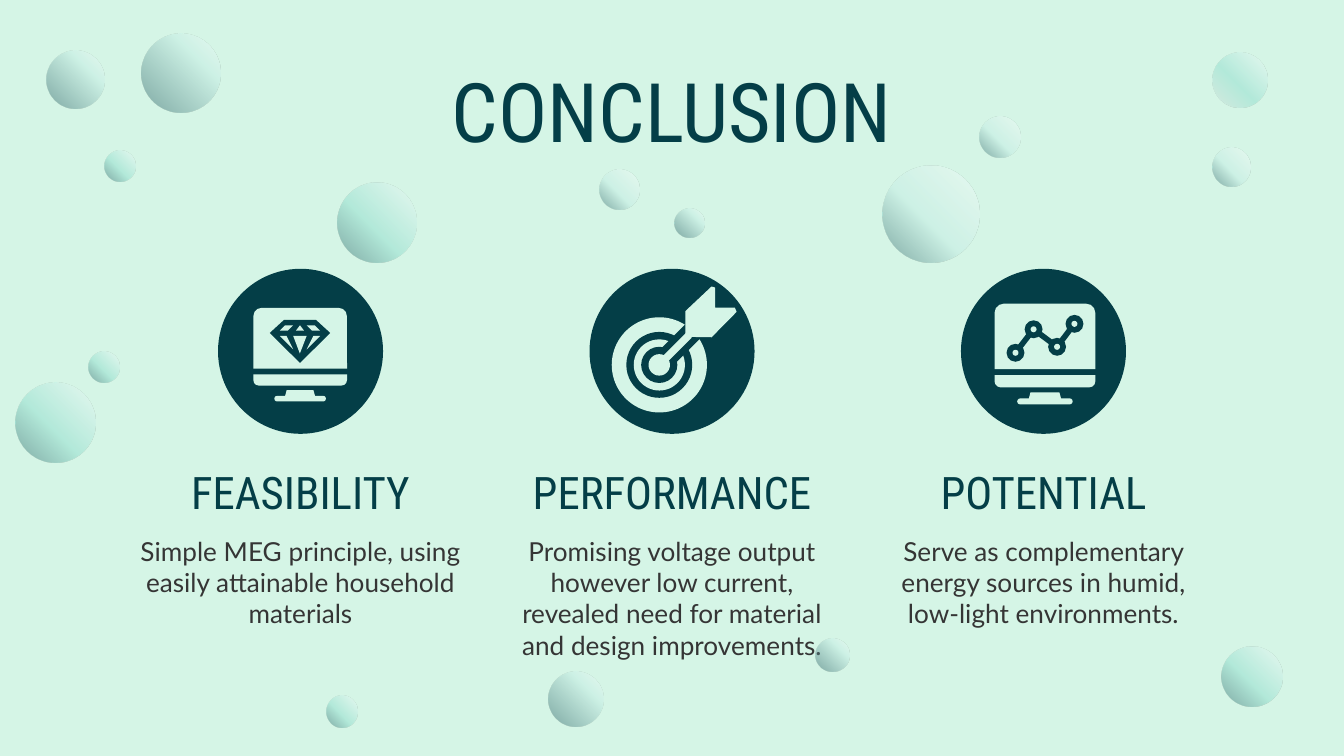
from dataclasses import dataclass
from lxml.etree import SubElement
from pptx import Presentation
from pptx.dml.color import RGBColor
from pptx.enum.shapes import MSO_CONNECTOR, MSO_SHAPE
from pptx.enum.text import MSO_ANCHOR, PP_ALIGN
from pptx.oxml import parse_xml
from pptx.oxml.ns import nsdecls, qn
from pptx.util import Pt


@dataclass(frozen=True)
class Theme:
    dark: str = "043E47"
    light: str = "D5F5E7"
    back: str = "D5F5E6"
    ink: str = "353535"
    white: str = "FFFFFF"
    mist: str = "C1ECE4"
    mint: str = "82D9C8"
    gray: str = "D9D9D9"
    head: str = "Roboto Condensed"
    body: str = "Lato"
    big: int = 44
    mid: int = 24
    small: int = 14


T = Theme()
TINTS = {
    "mist": (56, T.mist, T.dark),
    "mint": (56, T.mint, T.dark),
    "deep": (31, T.mist, T.dark),
    "pale": (56, T.mint, T.gray),
}
REAR = [
    (649.4, 79.2, 20.5, "mist"), (649.4, 28.1, 29.5, "pale"),
    (654.5, 346.3, 32.4, "mint"), (25.2, 27.4, 31, "deep"),
    (8.6, 205.2, 42.5, "mint"), (175, 373, 16.6, "mint"),
    (47.5, 188.6, 16.6, "mint"), (524.9, 62.6, 21.6, "mist"),
    (361.4, 111.6, 15.8, "deep"), (56.2, 80.6, 16.6, "mint"),
    (321.1, 90.7, 21.6, "mist"), (180.7, 97.9, 42.5, "mint"),
    (473, 88.6, 51.8, "mist"),
]
FRONT = [(75.6, 18, 42.5, "deep"), (437, 342, 18, "deep"),
         (293.8, 360, 29.5, "deep")]
POINTS = [
    ("FEASIBILITY", "Simple MEG principle, using easily attainable "
     "household materials", 59.8),
    ("PERFORMANCE", "Promising voltage output however low current, "
     "revealed need for material and design improvements.", 94.3),
    ("POTENTIAL", "Serve as complementary energy sources in humid, "
     "low-light environments.", 62.6),
]
MIDDLE, STEP, WIDE, DISC = 360, 199, 190.8, 88.4


def paint(shape, tone):
    shape.shadow.inherit = False
    shape.fill.solid()
    shape.fill.fore_color.rgb = RGBColor.from_string(tone)
    shape.line.fill.background()


def add_form(slide, kind, x, y, w, h, tone, bends=()):
    shape = slide.shapes.add_shape(kind, Pt(x), Pt(y), Pt(w), Pt(h))
    paint(shape, tone)
    for i, bend in enumerate(bends):
        shape.adjustments[i] = bend
    return shape


def add_dot(slide, x, y, size, tone):
    return add_form(slide, MSO_SHAPE.OVAL, x - size / 2, y - size / 2,
                    size, size, tone)


def add_poly(slide, x, y, spots, tone):
    first, *rest = [(Pt(x + a), Pt(y + b)) for a, b in spots]
    pen = slide.shapes.build_freeform(*first)
    pen.add_line_segments(rest, close=True)
    paint(pen.convert_to_shape(), tone)


def add_line(slide, start, end, width, tone):
    line = slide.shapes.add_connector(
        MSO_CONNECTOR.STRAIGHT, *map(Pt, (*start, *end)))
    line.line.width = Pt(width)
    line.line.color.rgb = RGBColor.from_string(tone)
    SubElement(line._element.spPr, qn("a:effectLst"))


def add_bubble(slide, x, y, size, tint):
    shape = add_form(slide, MSO_SHAPE.OVAL, x, y, size, size, T.white)
    place, core, edge = TINTS[tint]
    stops = "".join(
        f'<a:gs pos="{pos * 1000}"><a:srgbClr val="{tone}">'
        '<a:alpha val="41000"/></a:srgbClr></a:gs>'
        for pos, tone in ((0, T.white), (place, core), (100, edge)))
    fill = parse_xml(
        f'<a:gradFill {nsdecls("a")}><a:gsLst>{stops}</a:gsLst>'
        '<a:path path="circle"><a:fillToRect l="100000" b="100000"/>'
        '</a:path></a:gradFill>')
    props = shape._element.spPr
    props.replace(props.find(qn("a:solidFill")), fill)


def add_text(slide, x, y, w, h, words, font, size, tone,
             anchor=MSO_ANCHOR.TOP):
    frame = slide.shapes.add_textbox(Pt(x), Pt(y), Pt(w), Pt(h)).text_frame
    frame.word_wrap = True
    frame.vertical_anchor = anchor
    frame.margin_left = frame.margin_right = Pt(7.2)
    frame.margin_top = frame.margin_bottom = Pt(7.2)
    para = frame.paragraphs[0]
    para.alignment = PP_ALIGN.CENTER
    run = para.add_run()
    run.text = words
    run.font.name = font
    run.font.size = Pt(size)
    run.font.color.rgb = RGBColor.from_string(tone)


def add_screen(slide, x, y, w):
    kind = MSO_SHAPE.ROUND_2_SAME_RECTANGLE
    add_form(slide, kind, x, y, w, 0.65 * w, T.light, (0.14, 0))
    add_form(slide, kind, x, y + 0.71 * w, w, 0.12 * w, T.light, (0, 0.5))
    foot = 0.55 * w
    left, top = x + (w - foot) / 2, y + 0.88 * w
    add_poly(slide, left, top,
             [(0.24 * foot, 0), (0.76 * foot, 0),
              (0.8 * foot, 0.08 * w), (0.2 * foot, 0.08 * w)], T.light)
    add_form(slide, MSO_SHAPE.ROUNDED_RECTANGLE, left, top + 0.06 * w,
             foot, 0.06 * w, T.light, (0.5,))


def draw_gem(slide):
    add_screen(slide, 135.7, 164.9, 50.2)
    x, y = 160.7, 171.4
    add_poly(slide, x, y, [(-8.6, 0), (8.6, 0), (16.2, 7), (0, 23),
                           (-16.2, 7)], T.dark)
    add_poly(slide, x, y, [(0, 2.9), (-2.2, 5.8), (2.2, 5.8)], T.light)
    add_poly(slide, x, y, [(-3.6, 8.6), (0, 18), (3.6, 8.6)], T.light)
    for side in (-1, 1):
        for facet in ([(7.9, 2.9), (10.8, 5.8), (6.5, 5.8), (3.6, 2.9)],
                      [(10.8, 8.6), (3.6, 15.8), (7.2, 8.6)]):
            add_poly(slide, x, y, [(side * a, b) for a, b in facet], T.light)


def draw_target(slide):
    x, y = 353.2, 195.5
    for size, tone in ((51, T.light), (35.3, T.dark), (27.4, T.light),
                       (19.4, T.dark)):
        add_dot(slide, x, y, size, tone)
    add_line(slide, (x, y), (x + 21, y - 21), 11, T.dark)
    add_dot(slide, x, y, 11.5, T.light)
    add_line(slide, (x, y), (x + 16, y - 16), 4, T.light)
    add_poly(slide, x, y, [(28, -42), (14, -28.8), (14, -15), (28, -14.8),
                           (41.4, -28.4), (40.5, -30.6), (29.9, -30.6),
                           (29.9, -41.4)], T.light)


def draw_graph(slide):
    add_screen(slide, 532.8, 162.7, 54)
    nodes = [(544, 189), (553.7, 176.4), (566.3, 185.8), (575.6, 173.5)]
    for start, end in zip(nodes, nodes[1:]):
        add_line(slide, start, end, 3, T.dark)
    for x, y in nodes:
        add_dot(slide, x, y, 9.6, T.dark)
        add_dot(slide, x, y, 3.2, T.light)


def main():
    deck = Presentation()
    deck.slide_width, deck.slide_height = Pt(720), Pt(405)
    slide = deck.slides.add_slide(deck.slide_layouts[6])
    slide.background.fill.solid()
    slide.background.fill.fore_color.rgb = RGBColor.from_string(T.back)
    for bubble in REAR:
        add_bubble(slide, *bubble)
    add_text(slide, 56.2, 25.2, 607.6, 54, "CONCLUSION", T.head, T.big, T.dark)
    for i, (title, words, height) in enumerate(POINTS):
        x = MIDDLE + (i - 1) * STEP
        left = x - WIDE / 2
        add_dot(slide, x, 144 + DISC / 2, DISC, T.dark)
        add_text(slide, left, 247, WIDE, 38.2, title, T.head, T.mid, T.dark,
                 MSO_ANCHOR.BOTTOM)
        add_text(slide, left, 279.4, WIDE, height, words, T.body, T.small,
                 T.ink)
    for bubble in FRONT:
        add_bubble(slide, *bubble)
    for draw in (draw_gem, draw_target, draw_graph):
        draw(slide)
    deck.save("out.pptx")


if __name__ == "__main__":
    main()
